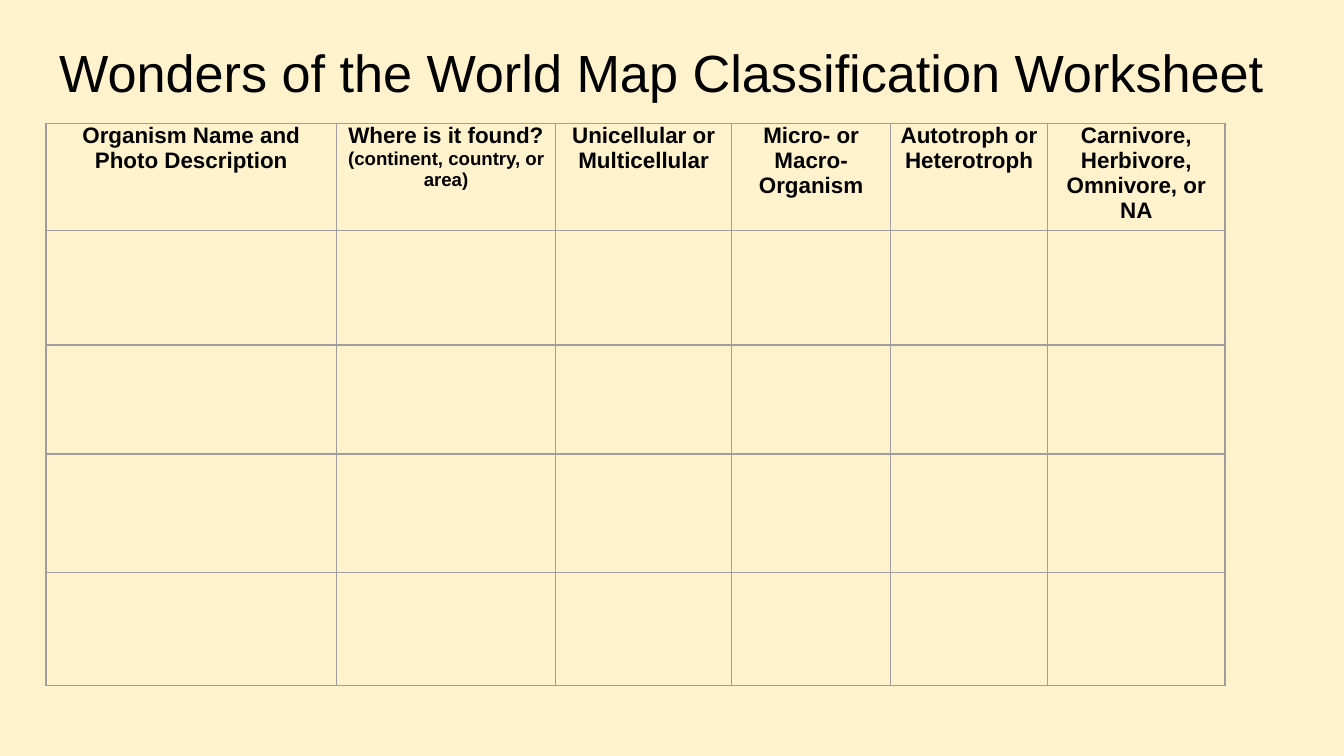
from pptx import Presentation
from pptx.dml.color import RGBColor
from pptx.enum.text import MSO_ANCHOR, PP_ALIGN
from pptx.oxml.ns import qn
from pptx.util import Cm, Pt
from lxml import etree

CREAM = RGBColor(0xFF, 0xF2, 0xCC)
BLACK = RGBColor(0, 0, 0)
GREY = RGBColor(0x9E, 0x9E, 0x9E)
TOP = MSO_ANCHOR.TOP
CENTER = PP_ALIGN.CENTER

TITLE = "Wonders of the World Map Classification Worksheet"
HEADS = [
    [("Organism Name and", 12), ("Photo Description", 12)],
    [("Where is it found?", 12), ("(continent, country, or area)", 10)],
    [("Unicellular or Multicellular", 12)],
    [("Micro- or Macro- Organism", 12)],
    [("Autotroph or Heterotroph", 12)],
    [("Carnivore, Herbivore, Omnivore, or NA", 12)],
]
COLS = [5.49, 4.14, 3.33, 3, 2.97, 3.35]
ROWS = [1.55, 2.16, 2.06, 2.24, 2.13]


def add_run(para, text, size, bold=False):
    """Add one styled run to a paragraph."""
    run = para.add_run()
    run.text = text
    font = run.font
    font.name, font.size, font.bold = "Arial", Pt(size), bold
    font.color.rgb = BLACK


def add_title(slide, left, top, width, height):
    """Place the slide title in the given box."""
    frame = slide.shapes.add_textbox(Cm(left), Cm(top), Cm(width), Cm(height)).text_frame
    frame.word_wrap = True
    frame.vertical_anchor = TOP
    frame.margin_left = frame.margin_right = Cm(0.25)
    frame.margin_top = frame.margin_bottom = Cm(0.25)
    add_run(frame.paragraphs[0], TITLE, 28)


def add_border(cell):
    """Draw a thin grey line on all four sides of a cell."""
    props = cell._tc.get_or_add_tcPr()
    for spot, side in enumerate(("a:lnL", "a:lnR", "a:lnT", "a:lnB")):
        line = etree.Element(qn(side), w=str(Pt(0.75)))
        fill = etree.SubElement(line, qn("a:solidFill"))
        etree.SubElement(fill, qn("a:srgbClr"), val=str(GREY))
        props.insert(spot, line)


def fill_head(cell, lines):
    """Write the centred bold lines of a column heading."""
    cell.margin_left = cell.margin_right = Cm(0.18)
    cell.margin_top = cell.margin_bottom = 0
    frame = cell.text_frame
    for spot, (text, size) in enumerate(lines):
        para = frame.add_paragraph() if spot else frame.paragraphs[0]
        para.alignment = CENTER
        add_run(para, text, size, True)


def add_grid(slide, left, top, width, height):
    """Place the worksheet table in the given box."""
    table = slide.shapes.add_table(
        len(ROWS), len(COLS), Cm(left), Cm(top), Cm(width), Cm(height)
    ).table
    table.first_row = table.horz_banding = False
    for col, size in zip(table.columns, COLS):
        col.width = Cm(size)
    for row, size in zip(table.rows, ROWS):
        row.height = Cm(size)
    for cell in table.iter_cells():
        cell.fill.background()
        add_border(cell)
    for spot, lines in enumerate(HEADS):
        fill_head(table.cell(0, spot), lines)


def main():
    """Build and save the worksheet slide."""
    deck = Presentation()
    deck.slide_width, deck.slide_height = Cm(25.4), Cm(14.29)
    slide = deck.slides.add_slide(deck.slide_layouts[6])
    back = slide.background.fill
    back.solid()
    back.fore_color.rgb = CREAM
    add_title(slide, 0.87, 0.51, 23.67, 1.6)
    add_grid(slide, 0.87, 2.33, sum(COLS), sum(ROWS))
    deck.save("out.pptx")


if __name__ == "__main__":
    main()
